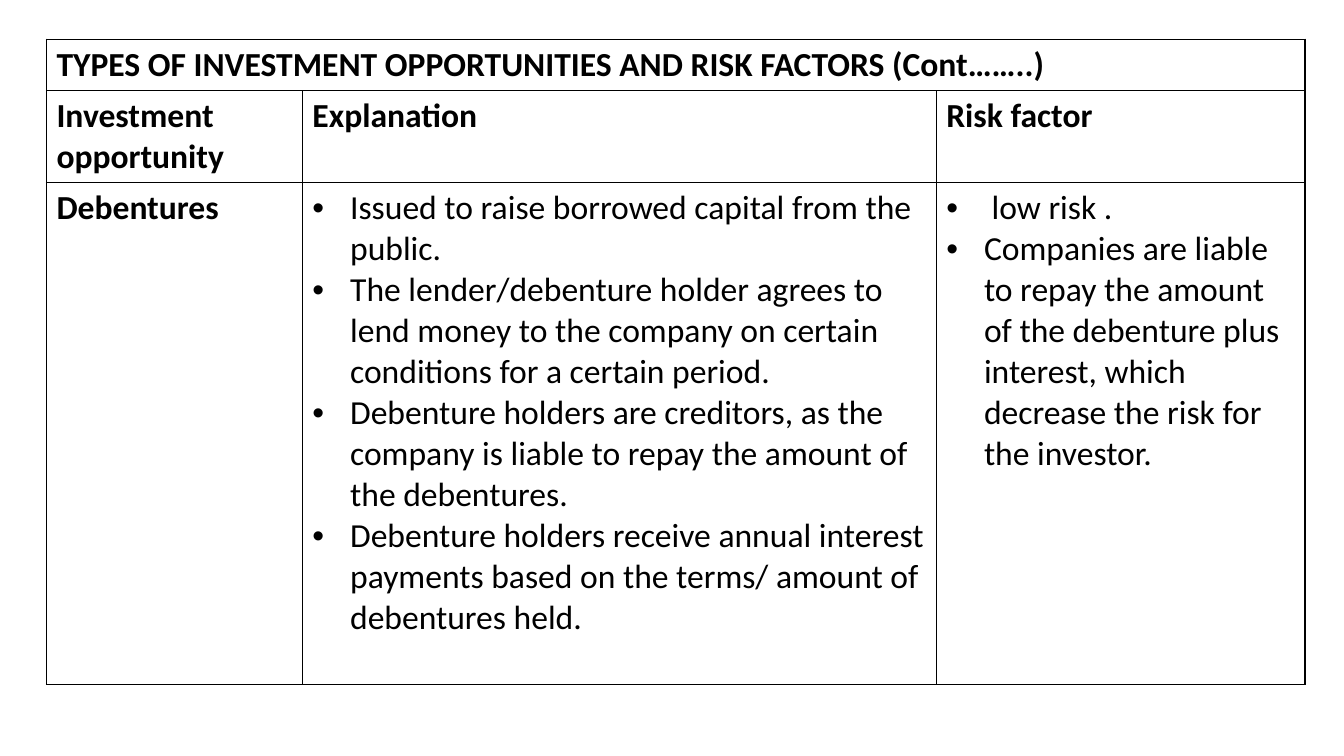
from dataclasses import dataclass

from lxml import etree
from pptx import Presentation
from pptx.dml.color import RGBColor
from pptx.enum.text import MSO_ANCHOR
from pptx.oxml.ns import qn
from pptx.util import Cm, Pt

TOP = MSO_ANCHOR.TOP


@dataclass(frozen=True)
class Theme:
    font: str = "Calibri"
    size: int = 24
    ink: str = "000000"
    border_width: int = 1
    indent: float = 0.95


THEME = Theme()

TITLE = "TYPES OF INVESTMENT OPPORTUNITIES AND RISK FACTORS (Cont……..)"
HEADINGS = ["Investment opportunity", "Explanation", "Risk factor"]
OPPORTUNITY = "Debentures"
EXPLANATIONS = [
    "Issued to raise borrowed capital from the public.",
    "The lender/debenture holder agrees to lend money to the company "
    "on certain conditions for a certain period.",
    "Debenture holders are creditors, as the company is liable to repay "
    "the amount of the debentures.",
    "Debenture holders receive annual interest payments based on the terms/ "
    "amount of debentures held.",
]
RISKS = [
    " low risk .",
    "Companies are liable to repay the amount of the debenture plus interest, "
    "which decrease the risk for the investor.",
]

# Shares of the table box taken by each column and row
COLUMN_SHARES = [2.54, 6.29, 3.66]
ROW_SHARES = [0.51, 0.91, 4.98]


def add_bullet(paragraph):
    properties = paragraph._p.get_or_add_pPr()
    properties.set("marL", str(Cm(THEME.indent)))
    properties.set("indent", str(-Cm(THEME.indent)))
    etree.SubElement(properties, qn("a:buFont"), typeface="Arial")
    etree.SubElement(properties, qn("a:buChar"), char="•")


def draw_borders(cell):
    properties = cell._tc.get_or_add_tcPr()
    for position, side in enumerate(("lnL", "lnR", "lnT", "lnB")):
        line = etree.Element(qn(f"a:{side}"), w=str(Pt(THEME.border_width)))
        fill = etree.SubElement(line, qn("a:solidFill"))
        etree.SubElement(fill, qn("a:srgbClr"), val=THEME.ink)
        properties.insert(position, line)


def fill_cell(cell, texts, bulleted=False):
    cell.vertical_anchor = TOP
    frame = cell.text_frame
    for index, text in enumerate(texts):
        paragraph = frame.add_paragraph() if index else frame.paragraphs[0]
        if bulleted:
            add_bullet(paragraph)
        run = paragraph.add_run()
        run.text = text
        run.font.name = THEME.font
        run.font.size = Pt(THEME.size)
        run.font.bold = not bulleted
        run.font.color.rgb = RGBColor.from_string(THEME.ink)


def add_investment_table(slide, left, top, width, height):
    table = slide.shapes.add_table(
        len(ROW_SHARES), len(COLUMN_SHARES), left, top, width, height
    ).table
    table.first_row = table.horz_banding = False
    for column, share in zip(table.columns, COLUMN_SHARES):
        column.width = int(width * share / sum(COLUMN_SHARES))
    for row, share in zip(table.rows, ROW_SHARES):
        row.height = int(height * share / sum(ROW_SHARES))

    # Plain cells with a thin grid
    for cell in table.iter_cells():
        cell.fill.background()
        draw_borders(cell)

    # Title across the full width
    table.cell(0, 0).merge(table.cell(0, len(COLUMN_SHARES) - 1))
    fill_cell(table.cell(0, 0), [TITLE])

    # Column headings
    for index, heading in enumerate(HEADINGS):
        fill_cell(table.cell(1, index), [heading])

    # Investment opportunity
    fill_cell(table.cell(2, 0), [OPPORTUNITY])
    fill_cell(table.cell(2, 1), EXPLANATIONS, bulleted=True)
    fill_cell(table.cell(2, 2), RISKS, bulleted=True)


def main():
    presentation = Presentation()
    presentation.slide_width = Cm(33.87)
    presentation.slide_height = Cm(19.05)
    slide = presentation.slides.add_slide(presentation.slide_layouts[6])
    add_investment_table(slide, Cm(1.17), Cm(0.99), Cm(31.72), Cm(16.26))
    presentation.save("out.pptx")


if __name__ == "__main__":
    main()
